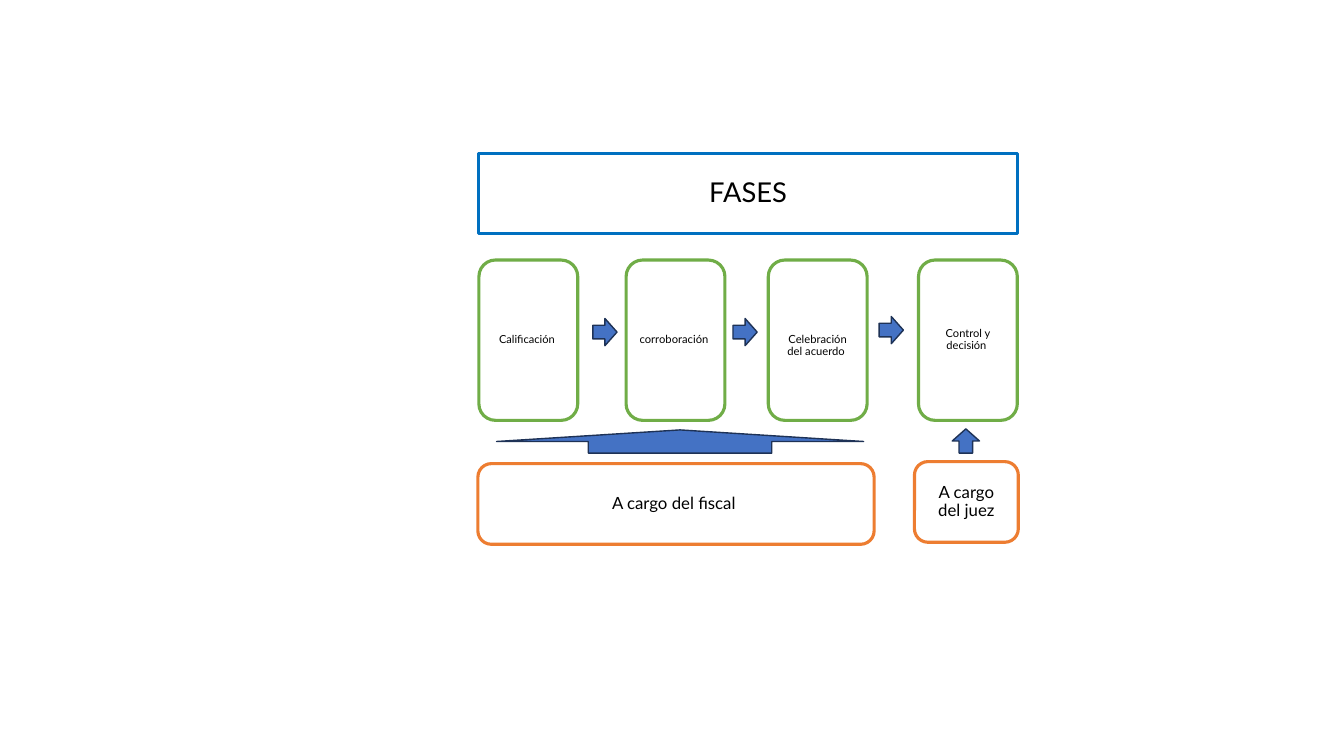
import pptx
import pptx.util
import pptx.dml.color
import pptx.enum.shapes
import pptx.enum.text
import pptx.oxml
import pptx.oxml.ns

Inches = pptx.util.Inches
Pt = pptx.util.Pt
KIND = pptx.enum.shapes.MSO_SHAPE
COLORS = {"blue": "0070C0", "green": "70AD47", "orange": "ED7D31",
          "arrow": "4472C4", "edge": "1E3256", "text": "000000"}
FONT = "Lato"
PHASES = [(0, "Calificación ", 7.9, 0), (1.46, "corroboración ", 8, 0),
          (2.87, "Celebración del acuerdo ", 8, 0.12),
          (4.36, "Control y decisión ", 7.9, 0)]
ARROWS = [(1.13, 0.58), (2.52, 0.58), (3.97, 0.56)]


def color(name):
    """Return the named colour."""
    return pptx.dml.color.RGBColor.from_string(COLORS[name])


def dress(shape, text, size, edge, drop=0):
    """Give a box its outline and centred text, lowered by a larger top inset."""
    shape.shadow.inherit = False
    shape.fill.background()
    shape.line.color.rgb = color(edge)
    shape.line.width = Pt(2.25)
    frame = shape.text_frame
    frame.word_wrap = True
    frame.auto_size = pptx.enum.text.MSO_AUTO_SIZE.NONE
    frame.vertical_anchor = pptx.enum.text.MSO_ANCHOR.MIDDLE
    frame.margin_left = frame.margin_right = Inches(0.07)
    frame.margin_top = Inches(0.04 + drop)
    frame.margin_bottom = Inches(0.04)
    para = frame.paragraphs[0]
    para.alignment = pptx.enum.text.PP_ALIGN.CENTER
    para.line_spacing = 0.9
    run = para.add_run()
    run.text = text
    run.font.size = Pt(size)
    run.font.name = FONT
    run.font.color.rgb = color("text")


def add_box(slide, box, text, size, edge, drop=0):
    """Add a rounded box with text."""
    shape = slide.shapes.add_shape(KIND.ROUNDED_RECTANGLE, *map(Inches, box))
    dress(shape, text, size, edge, drop)


def add_arrow(slide, box, turn=0):
    """Add a block arrow, turned by the given degrees."""
    shape = slide.shapes.add_shape(KIND.RIGHT_ARROW, *map(Inches, box))
    shape.rotation = turn
    shape.shadow.inherit = False
    shape.fill.solid()
    shape.fill.fore_color.rgb = color("arrow")
    shape.line.color.rgb = color("edge")
    shape.line.width = Pt(1)


def add_title(slide, box):
    """Turn the title placeholder into the rounded heading box."""
    title = slide.shapes.title
    title.left, title.top, title.width, title.height = map(Inches, box)
    space = pptx.oxml.ns.nsdecls("a")
    title.element.spPr.append(pptx.oxml.parse_xml(
        f'<a:prstGeom {space} prst="roundRect"><a:avLst/></a:prstGeom>'))
    dress(title, "FASES", 19.5, "blue")


def add_phases(slide, box):
    """Place the four phases and the arrows between them."""
    left, top, width, height = box
    for step, text, size, drop in PHASES:
        add_box(slide, (left + step, top, 0.98, height), text, size,
                "green", drop)
    for step, down in ARROWS:
        add_arrow(slide, (left + step, top + down, 0.24, 0.27))


def add_roles(slide, box):
    """Place the two roles and the arrows that point up to their phases."""
    left, top, width, height = box
    add_box(slide, (left, top + 0.36, 3.93, 0.8), "A cargo del fiscal ", 12,
            "orange")
    add_box(slide, (left + width - 1.03, top + 0.34, 1.03, 0.8),
            "A cargo del juez", 12, "orange")
    add_arrow(slide, (left + 4.72, top, 0.24, 0.27), 270)
    add_arrow(slide, (left + 1.89, top - 1.68, 0.23, 3.64), 270)


def main():
    """Build the slide and save it."""
    deck = pptx.Presentation()
    deck.slide_width = Inches(13.33)
    deck.slide_height = Inches(7.5)
    slide = deck.slides.add_slide(deck.slide_layouts.get_by_name("Title Only"))
    add_title(slide, (4.75, 1.52, 5.34, 0.8))
    add_phases(slide, (4.75, 2.58, 5.34, 1.59))
    add_roles(slide, (4.74, 4.24, 5.36, 1.16))
    deck.save("out.pptx")


if __name__ == "__main__":
    main()
